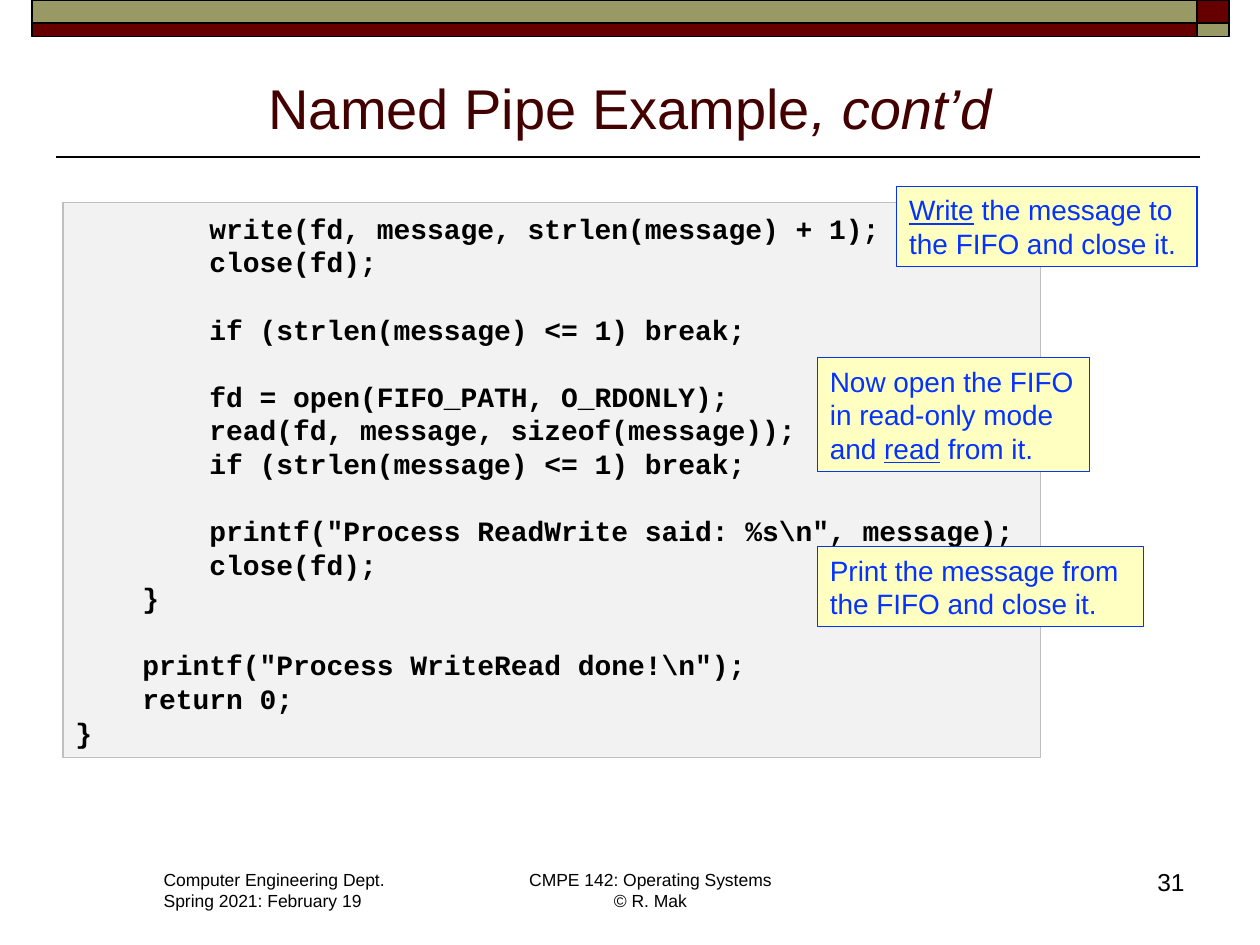
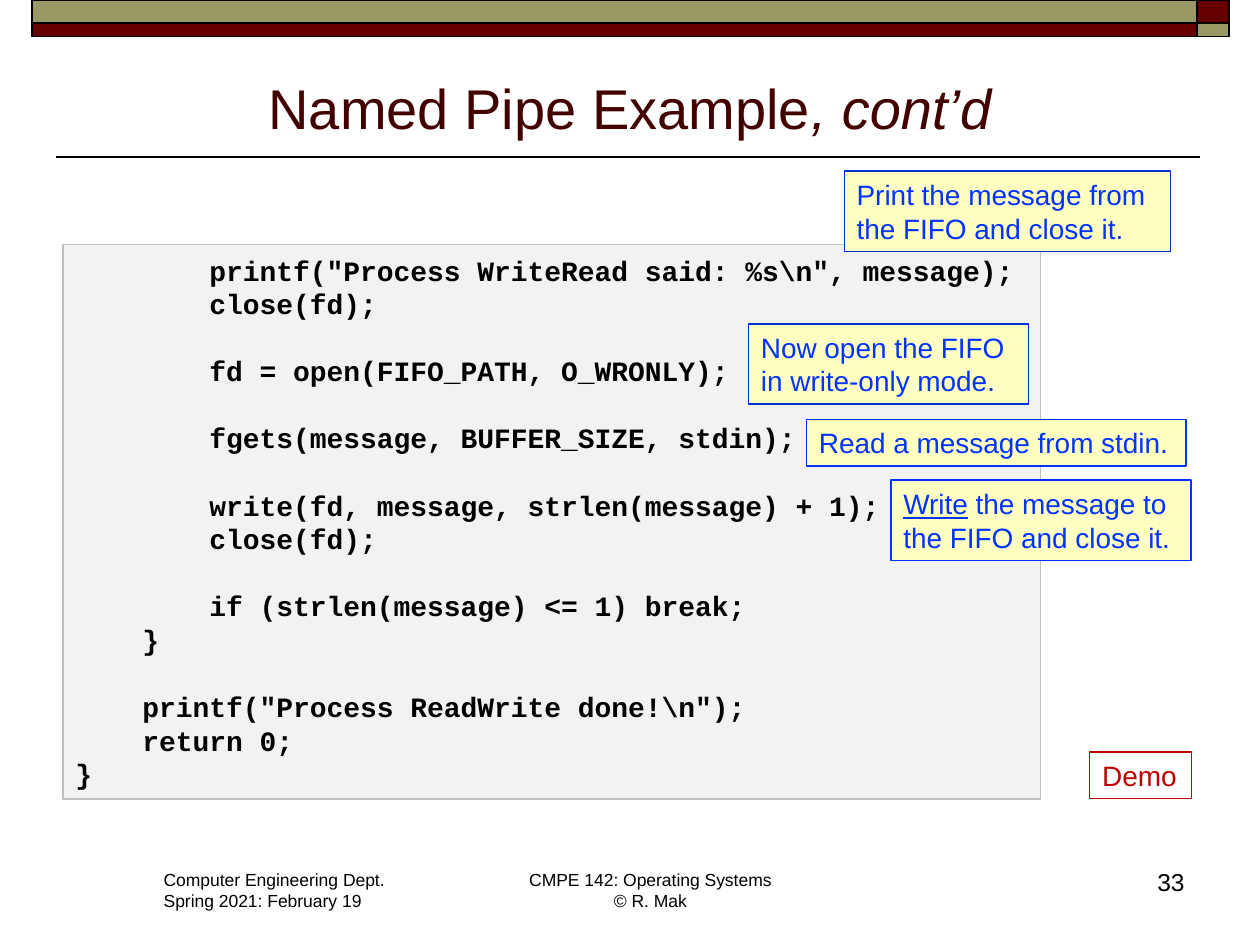
"""Build two slides on named pipes: code listings with callouts."""
from lxml.etree import SubElement
from pptx import Presentation
from pptx.dml.color import RGBColor
from pptx.enum.shapes import MSO_CONNECTOR as Connector, MSO_SHAPE as Shape
from pptx.enum.text import MSO_ANCHOR as Anchor, PP_ALIGN as Align
from pptx.oxml.ns import qn
from pptx.util import Cm, Pt

COLORS = {
    "maroon": "660000", "olive": "999966", "title": "420000", "black": "000000",
    "code_fill": "F2F2F2", "code_line": "BFBFBF", "note_fill": "FFFFC2",
    "blue": "0432FF", "dark_blue": "0033CC", "red": "C00000",
}
TITLE = "Named Pipe Example|, cont’d"
FOOTERS = [
    (3.05, 5.03, Align.LEFT, ["Computer Engineering Dept.", "Spring 2021: February 19"]),
    (10.34, 5.54, Align.CENTER, ["CMPE 142: Operating Systems", "© R. Mak"]),
]
WRITE_NOTE = ["|Write| the message to", "the FIFO and close it."]
PRINT_NOTE = ["Print the message from", "the FIFO and close it."]

READ_WRITE_CODE = r"""
        write(fd, message, strlen(message) + 1);
        close(fd);

        if (strlen(message) <= 1) break;

        fd = open(FIFO_PATH, O_RDONLY);
        read(fd, message, sizeof(message));
        if (strlen(message) <= 1) break;

        printf("Process ReadWrite said: %s\n", message);
        close(fd);
    }

    printf("Process WriteRead done!\n");
    return 0;
}
"""
WRITE_READ_CODE = r"""
        printf("Process WriteRead said: %s\n", message);
        close(fd);

        fd = open(FIFO_PATH, O_WRONLY);

        fgets(message, BUFFER_SIZE, stdin);

        write(fd, message, strlen(message) + 1);
        close(fd);

        if (strlen(message) <= 1) break;
    }

    printf("Process ReadWrite done!\n");
    return 0;
}
"""
NOTE = {"fill": "note_fill", "line": "blue", "color": "blue"}
DARK_NOTE = NOTE | {"line": "dark_blue"}
DEMO = {"line": "red", "color": "red"}
CODE = {"fill": "code_fill", "line": "code_line", "font": "Courier New", "bold": True}

SLIDES = [
    {"number": "31", "code_top": 4.09, "code": READ_WRITE_CODE, "notes": [
        (18.08, 3.76, 6.05, WRITE_NOTE, NOTE),
        (16.48, 7.21, 5.49,
         ["Now open the FIFO", "in read-only mode", "and |read| from it."], NOTE),
        (16.48, 11.02, 6.58, PRINT_NOTE, NOTE),
    ]},
    {"number": "33", "code_top": 4.93, "code": WRITE_READ_CODE, "notes": [
        (17.02, 3.45, 6.58, PRINT_NOTE, DARK_NOTE),
        (15.09, 6.53, 5.64, ["Now open the FIFO", "in write-only mode."], DARK_NOTE),
        (16.26, 8.46, 7.65, ["Read a message from stdin."], NOTE),
        (17.96, 9.68, 6.05, WRITE_NOTE, NOTE),
        (21.97, 15.16, 2.05, ["Demo"], DEMO),
    ]},
]
BAND_COLUMNS = [(0.64, 23.49), (24.13, 0.64)]
BAND_ROWS = [(0, 0.46, ("olive", "maroon")), (0.46, 0.28, ("maroon", "olive"))]


def rgb(name):
    return RGBColor.from_string(COLORS[name])


def add_runs(paragraph, text, emphasis, formats, color):
    """Write text whose odd parts between bars are emphasised."""
    for index, part in enumerate(text.split("|")):
        if part:
            run = paragraph.add_run()
            run.text = part
            values = formats | ({emphasis: True} if index % 2 else {})
            for name, value in values.items():
                setattr(run.font, name, value)
            run.font.color.rgb = rgb(color)


def add_box(slide, left, top, width, lines, size=16, align=Align.LEFT, fill=None,
            line=None, color="black", font="Arial", bold=False):
    """Add a text box sized to its lines; an empty line becomes space before."""
    height = Cm(0.25) + Pt(1.21 * size) * len(lines)
    box = slide.shapes.add_textbox(Cm(left), Cm(top), Cm(width), height)
    if fill:
        box.fill.solid()
        box.fill.fore_color.rgb = rgb(fill)
    if line:
        box.line.color.rgb = rgb(line)
        box.line.width = Pt(0.75)
    frame = box.text_frame
    frame.word_wrap = True
    frame.vertical_anchor = Anchor.MIDDLE
    pitch = Pt(1.2 * size)
    formats = {"name": font, "size": Pt(size), "bold": bold}
    previous = None
    for text in lines:
        if text:
            paragraph = frame.paragraphs[0] if previous is None else frame.add_paragraph()
            paragraph.alignment = align
            paragraph.line_spacing = pitch
            if previous == "":
                paragraph.space_before = pitch
            add_runs(paragraph, text, "underline", formats, color)
        previous = text


def add_frame(slide, number):
    """Add the rule, bands, footers, title and slide number."""
    rule = slide.shapes.add_connector(
        Connector.STRAIGHT, Cm(24.2), Cm(3.17), Cm(1.12), Cm(3.17))
    rule.line.color.rgb = rgb("black")
    rule.line.width = Pt(1)
    SubElement(rule._element.spPr, qn("a:effectLst"))
    for top, height, fills in BAND_ROWS:
        for (left, width), fill in zip(BAND_COLUMNS, fills):
            band = slide.shapes.add_shape(
                Shape.RECTANGLE, Cm(left), Cm(top), Cm(width), Cm(height))
            band.shadow.inherit = False
            band.fill.solid()
            band.fill.fore_color.rgb = rgb(fill)
            band.line.color.rgb = rgb("black")
            band.line.width = Pt(1)
    for left, width, align, lines in FOOTERS:
        add_box(slide, left, 17.4, width, lines, size=10, align=align)
    add_box(slide, 22.1, 17.35, 2.03, [number], size=14, align=Align.RIGHT)

    title = slide.shapes.title
    place = {"left": 1.27, "top": 1.14, "width": 22.86, "height": 1.83}
    for name, value in place.items():
        setattr(title, name, Cm(value))
    title.text_frame.vertical_anchor = Anchor.BOTTOM
    paragraph = title.text_frame.paragraphs[0]
    paragraph.alignment = Align.CENTER
    add_runs(paragraph, TITLE, "italic", {"name": "Arial", "size": Pt(32)}, "title")


def main():
    presentation = Presentation()
    presentation.slide_width, presentation.slide_height = Cm(25.4), Cm(19.05)
    for content in SLIDES:
        slide = presentation.slides.add_slide(presentation.slide_layouts[5])
        add_frame(slide, content["number"])
        code_lines = content["code"].strip("\n").split("\n")
        add_box(slide, 1.27, content["code_top"], 19.71, code_lines, **CODE)
        for left, top, width, lines, style in content["notes"]:
            add_box(slide, left, top, width, lines, **style)
    presentation.save("out.pptx")


if __name__ == "__main__":
    main()
